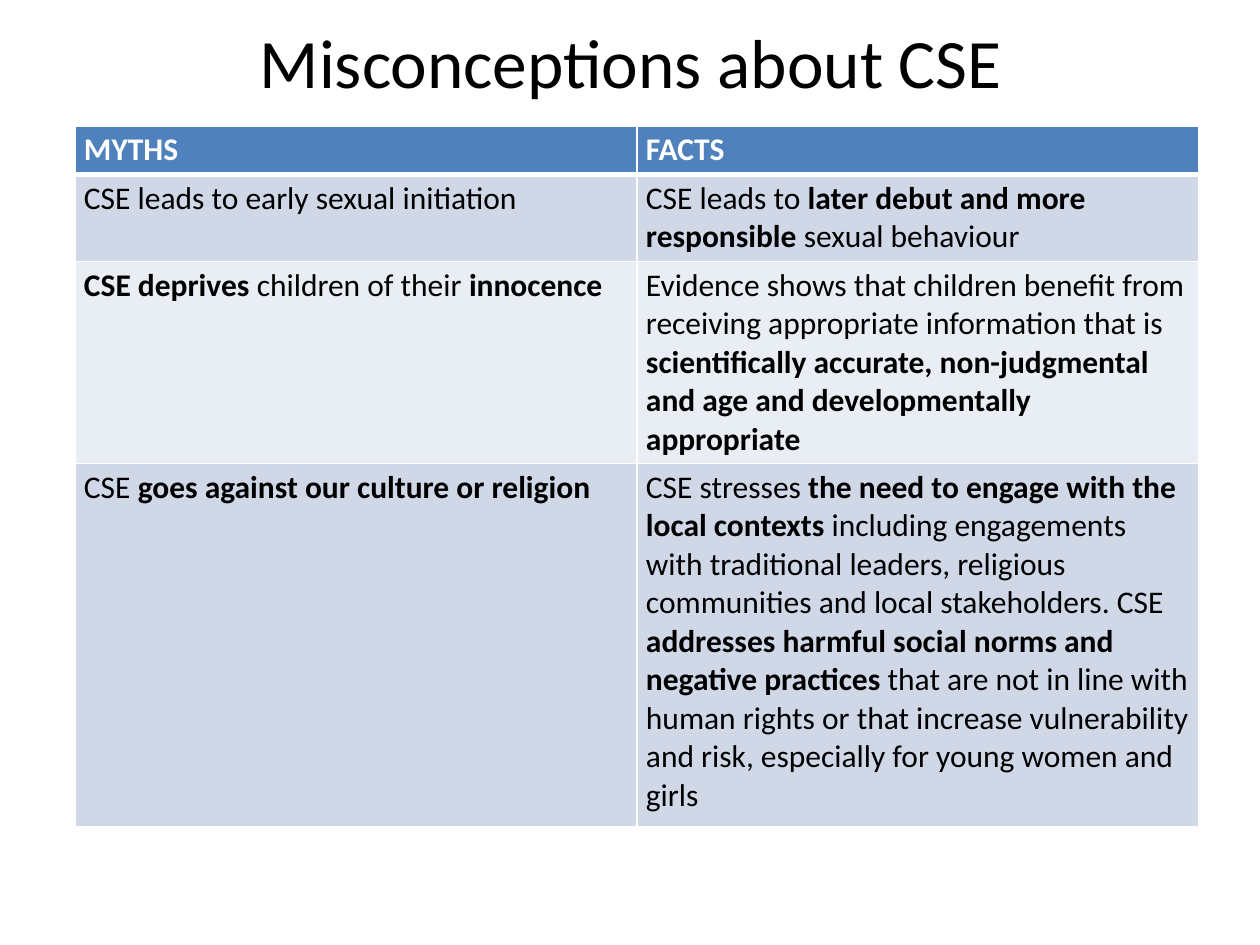
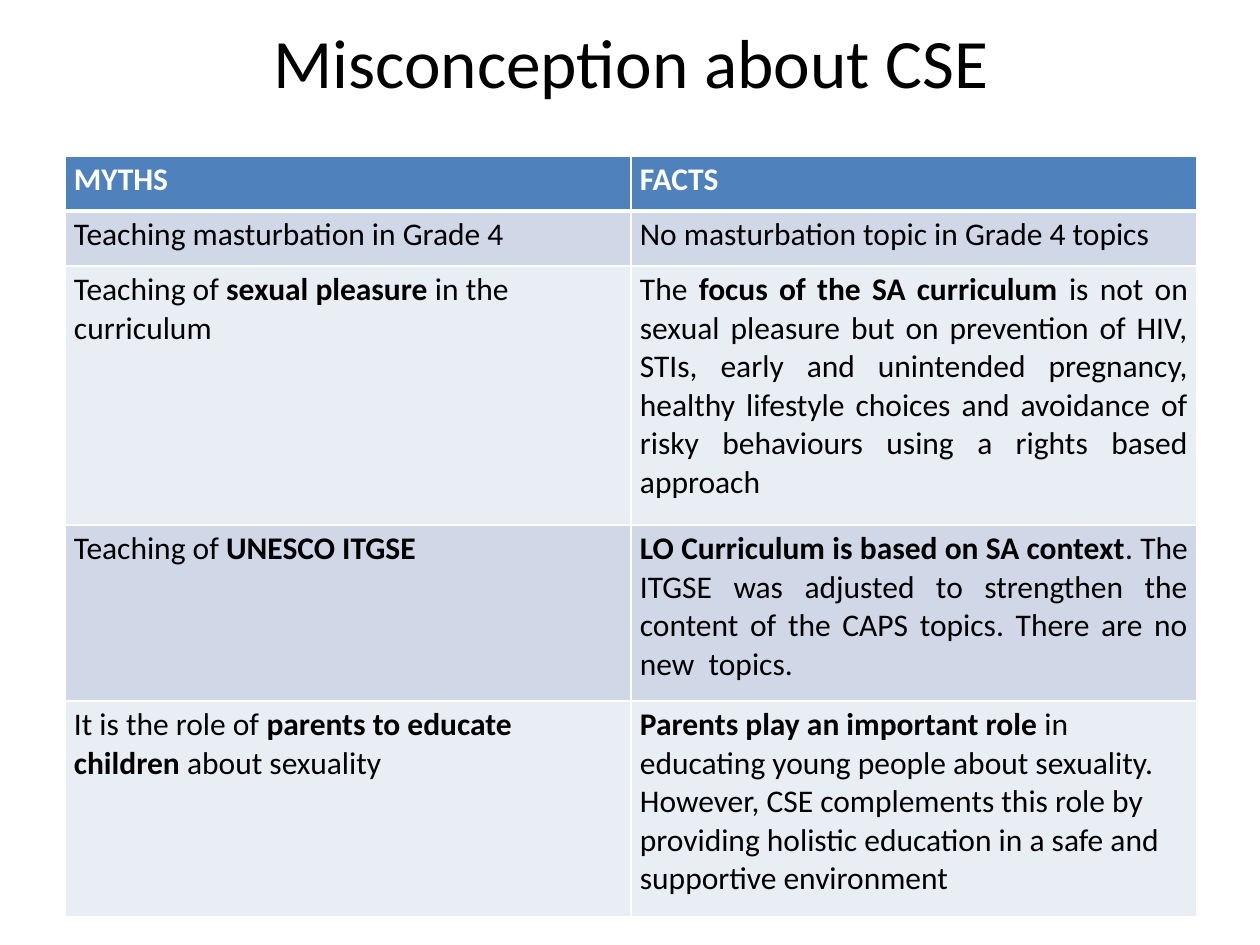
import pptx
import pptx.util
import pptx.dml.color
import pptx.enum.text
import pptx.oxml
import pptx.oxml.ns

RGB = pptx.dml.color.RGBColor
ALIGN = pptx.enum.text.PP_ALIGN
ANCHOR = pptx.enum.text.MSO_ANCHOR

WHITE = RGB(0xFF, 0xFF, 0xFF)
BLACK = RGB(0x00, 0x00, 0x00)
HEADER_BLUE = RGB(0x4F, 0x81, 0xBD)
BANDS = (RGB(0xD0, 0xD8, 0xE8), RGB(0xE9, 0xED, 0xF4))
FONT = "Calibri"
TITLE_BOX = (64, 16, 1134, 90)
HEADER = ("MYTHS", "FACTS")

# Content: ** switches bold on and off; "justified" lists rows whose fact is justified
SLIDES = [
    {
        "title": "Misconceptions about CSE",
        "left": 75, "top": 126, "col_width": 562,
        "row_heights": (47, 87, 201, 363),
        "justified": (),
        "rows": [
            ("CSE leads to early sexual initiation",
             "CSE leads to **later debut and more responsible **sexual behaviour"),
            ("**CSE deprives** children of their **innocence**",
             "Evidence shows that children benefit from receiving appropriate "
             "information that is **scientifically accurate, non-judgmental and "
             "age and developmentally appropriate**"),
            ("CSE **goes against our culture or religion**",
             "CSE stresses **the need to engage with the local contexts** including "
             "engagements with traditional leaders, religious communities and local "
             "stakeholders. CSE **addresses harmful social norms and negative "
             "practices** that are not in line with human rights or that increase "
             "vulnerability and risk, especially for young women and girls"),
        ],
    },
    {
        "title": "Misconception about CSE",
        "left": 65, "top": 156, "col_width": 566,
        "row_heights": (55, 55, 259, 176, 216),
        "justified": (2, 3),
        "rows": [
            ("Teaching masturbation in Grade 4",
             "No masturbation topic in Grade 4 topics"),
            ("Teaching of **sexual pleasure **in the curriculum",
             "The **focus of the SA curriculum **is not on sexual pleasure but on "
             "prevention of HIV, STIs, early and unintended pregnancy, healthy "
             "lifestyle choices and avoidance of risky behaviours using a rights "
             "based approach"),
            ("Teaching of **UNESCO ITGSE**",
             "**LO Curriculum is based on SA context**. The ITGSE was adjusted to "
             "strengthen the content of the CAPS topics. There are no new  topics."),
            ("It is the role of **parents to educate children** about sexuality",
             "**Parents play an important role **in educating young people about "
             "sexuality. However, CSE complements this role by providing holistic "
             "education in a safe and supportive environment"),
        ],
    },
]


def px(n):
    return pptx.util.Emu(round(n * 914400 / 126))


def add_run(p, text, size, color, bold=False):
    r = p.add_run()
    r.text = text
    r.font.name = FONT
    r.font.size = pptx.util.Pt(size)
    r.font.bold = bold
    r.font.color.rgb = color


def add_title(s, text):
    sp = s.shapes.title
    sp.left, sp.top, sp.width, sp.height = map(px, TITLE_BOX)
    tf = sp.text_frame
    tf.auto_size = pptx.enum.text.MSO_AUTO_SIZE.NONE
    tf.vertical_anchor = ANCHOR.MIDDLE
    p = tf.paragraphs[0]
    p.alignment = ALIGN.CENTER
    add_run(p, text, 39.6, BLACK)


def set_borders(cell, top, bottom):
    """White cell lines, widths in points, placed ahead of the cell fill."""
    tc_pr = cell._tc.get_or_add_tcPr()
    widths = (("L", 1), ("R", 1), ("T", top), ("B", bottom))
    for i, (side, width) in enumerate(widths):
        tc_pr.insert(i, pptx.oxml.parse_xml(
            f'<a:ln{side} {pptx.oxml.ns.nsdecls("a")} w="{pptx.util.Pt(width)}">'
            f'<a:solidFill><a:srgbClr val="{WHITE}"/></a:solidFill></a:ln{side}>'))


def fill_cell(cell, text, row, justified):
    is_header = row == 0
    cell.fill.solid()
    cell.fill.fore_color.rgb = HEADER_BLUE if is_header else BANDS[(row - 1) % 2]
    cell.margin_left = cell.margin_right = px(9)
    cell.margin_top = cell.margin_bottom = px(5)
    cell.vertical_anchor = ANCHOR.TOP
    set_borders(cell, 3 if row == 1 else 1, 3 if is_header else 1)
    p = cell.text_frame.paragraphs[0]
    p.alignment = ALIGN.JUSTIFY if justified else ALIGN.LEFT
    for i, part in enumerate(text.split("**")):
        if part:
            add_run(p, part, 18, WHITE if is_header else BLACK, is_header or i % 2 == 1)


def add_myth_table(s, data):
    heights = data["row_heights"]
    table = s.shapes.add_table(
        len(heights), 2, px(data["left"]), px(data["top"]),
        px(2 * data["col_width"]), px(sum(heights))).table
    for column in table.columns:
        column.width = px(data["col_width"])
    for row, texts in enumerate([HEADER] + data["rows"]):
        table.rows[row].height = px(heights[row])
        for col, text in enumerate(texts):
            fill_cell(table.cell(row, col), text, row,
                      col == 1 and row in data["justified"])


def main():
    prs = pptx.Presentation()
    prs.slide_width, prs.slide_height = px(1260), px(945)
    for data in SLIDES:
        s = prs.slides.add_slide(prs.slide_layouts[5])
        add_title(s, data["title"])
        add_myth_table(s, data)
    prs.save("out.pptx")


if __name__ == "__main__":
    main()
